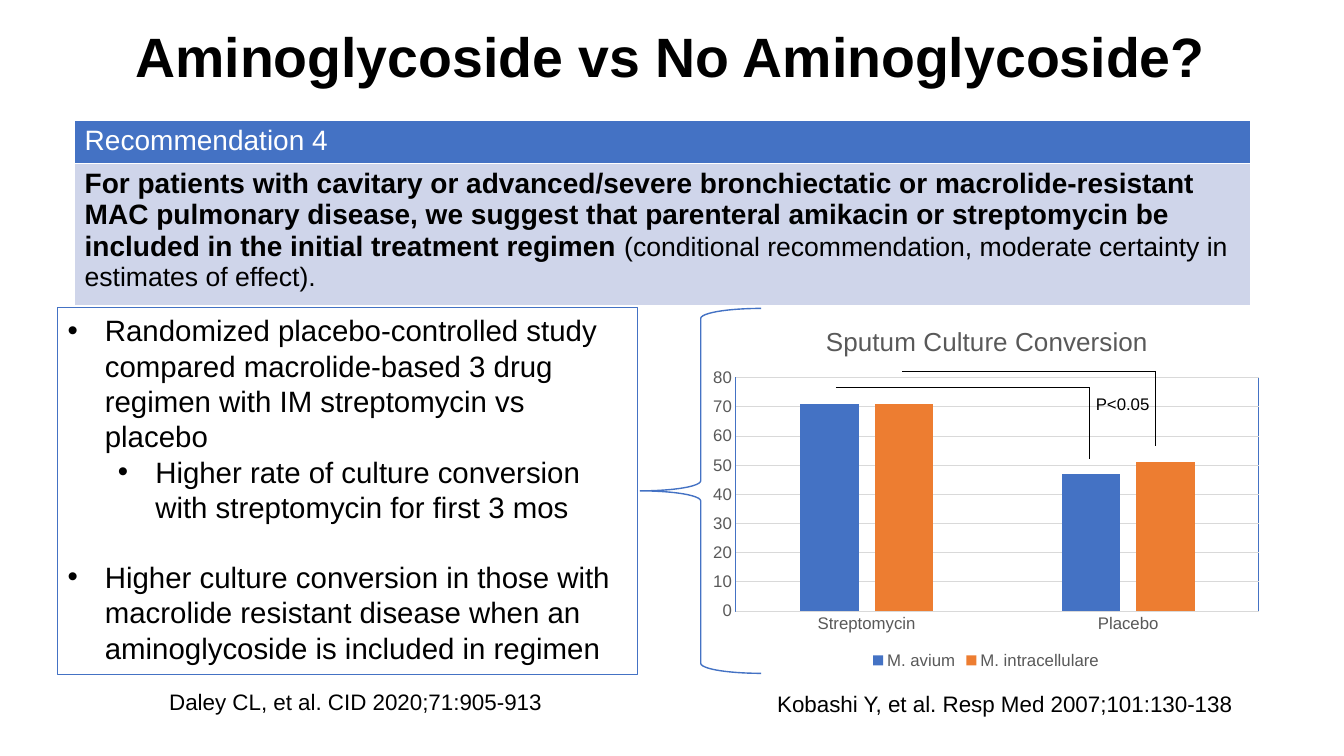
from lxml import etree
from pptx import Presentation
from pptx.chart.data import CategoryChartData
from pptx.dml.color import RGBColor
from pptx.enum import chart as ch, shapes, text
from pptx.oxml import parse_xml
from pptx.oxml.ns import nsdecls, qn
from pptx.util import Inches, Pt

FONT = "Arial"
BLACK, WHITE, GRAY, GRID = "000000", "FFFFFF", "595959", "D9D9D9"
BLUE, ORANGE, PALE = "4472C4", "ED7D31", "CFD5EA"


def rgb(value):
    return RGBColor.from_string(value)


def box(left, top, width, height):
    return [Inches(v) for v in (left, top, width, height)]


def place(sp, *bounds):
    sp.left, sp.top, sp.width, sp.height = box(*bounds)


def style(font, size, color=BLACK, bold=False):
    font.name, font.size, font.bold = FONT, Pt(size), bold
    font.color.rgb = rgb(color)


def set_line(line, color, width):
    line.color.rgb = rgb(color)
    line.width = Pt(width)


def add_title(slide, title):
    sp = slide.shapes.title
    place(sp, 0.9, 0.05, 11.5, 1.08)
    tf = sp.text_frame
    tf.text = title
    tf.vertical_anchor = text.MSO_ANCHOR.MIDDLE
    p = tf.paragraphs[0]
    p.alignment, p.line_spacing = text.PP_ALIGN.CENTER, 0.9
    style(p.runs[0].font, 39.6, bold=True)


def add_recommendation(slide, heading, advice, certainty):
    frame = slide.shapes.add_table(2, 1, *box(0.74, 1.19, 11.66, 1.84))
    table = frame.table
    for row, height in zip(table.rows, (0.43, 1.41)):
        row.height = Inches(height)
    for i, fill in enumerate((BLUE, PALE)):
        cell = table.cell(i, 0)
        cell.fill.solid()
        cell.fill.fore_color.rgb = rgb(fill)
    p = table.cell(0, 0).text_frame.paragraphs[0]
    p.text = heading
    style(p.runs[0].font, 20, WHITE)
    p = table.cell(1, 0).text_frame.paragraphs[0]
    for words, size, bold in ((advice, 20, True), (certainty, 19, False)):
        r = p.add_run()
        r.text = words
        style(r.font, size, bold=bold)


def add_bullets(slide, items):
    sp = slide.placeholders[1]
    place(sp, 0.57, 3.05, 5.75, 3.64)
    set_line(sp.line, BLUE, 0.75)
    tf = sp.text_frame
    tf.word_wrap = True
    tf.auto_size = text.MSO_AUTO_SIZE.NONE
    tf.vertical_anchor = text.MSO_ANCHOR.TOP
    for i, (level, before, words) in enumerate(items):
        p = tf.paragraphs[0] if i == 0 else tf.add_paragraph()
        p.text = words
        p.level, p.space_before, p.line_spacing = level, Pt(before), 1.0
        pPr = p._p.get_or_add_pPr()
        pPr.set("marL", str(Inches(0.37 + 0.5 * level)))
        pPr.set("indent", str(Inches(-0.37)))
        etree.SubElement(pPr, qn("a:buFont"), typeface=FONT)
        etree.SubElement(pPr, qn("a:buChar"), char="•")
        style(p.runs[0].font, 21)


def manual_layout(x, y, w=None, h=None, inner=False):
    """Layout element with positions as fractions of the chart."""
    parts = '<c:layoutTarget val="inner"/>' if inner else ""
    parts += '<c:xMode val="edge"/><c:yMode val="edge"/>'
    for tag, value in zip("xywh", (x, y, w, h)):
        if value is not None:
            parts += f'<c:{tag} val="{value}"/>'
    return parse_xml(f'<c:layout {nsdecls("c")}><c:manualLayout>{parts}'
                     '</c:manualLayout></c:layout>')


def add_conversion_chart(slide, title, categories, series):
    data = CategoryChartData()
    data.categories = categories
    for name, values, _ in series:
        data.add_series(name, values)
    chart = slide.shapes.add_chart(ch.XL_CHART_TYPE.COLUMN_CLUSTERED,
                                   *box(6.96, 3.06, 5.64, 3.62), data).chart
    style(chart.font, 10)

    # Title and legend
    chart.has_title = True
    tf = chart.chart_title.text_frame
    tf.text = title
    style(tf.paragraphs[0].runs[0].font, 18.6, GRAY)
    chart.chart_title.include_in_layout = False
    title_xml = chart.chart_title._element
    for old in title_xml.findall(qn("c:layout")):
        title_xml.remove(old)
    title_xml.find(qn("c:tx")).addnext(manual_layout(0.21, 0.03))
    chart.has_legend = True
    chart.legend.position = ch.XL_LEGEND_POSITION.BOTTOM
    chart.legend.include_in_layout = False
    style(chart.legend.font, 12, GRAY)

    # Axes
    values, cats = chart.value_axis, chart.category_axis
    for axis in (values, cats):
        axis.major_tick_mark = axis.minor_tick_mark = ch.XL_TICK_MARK.NONE
        style(axis.tick_labels.font, 12, GRAY)
    values.minimum_scale, values.maximum_scale, values.major_unit = 0, 80, 10
    values.format.line.fill.background()
    set_line(values.major_gridlines.format.line, GRID, 0.75)
    set_line(cats.format.line, GRID, 0.75)

    # Columns
    plot = chart.plots[0]
    plot.gap_width, plot.overlap, plot.vary_by_categories = 219, -27, False
    for s, (_, _, color) in zip(plot.series, series):
        s.format.fill.solid()
        s.format.fill.fore_color.rgb = rgb(color)

    # Plot area position and outline
    area = chart._chartSpace.chart.plotArea
    for old in area.findall(qn("c:layout")):
        area.remove(old)
    area.insert(0, manual_layout(0.06, 0.19, 0.92, 0.64, inner=True))
    area.append(parse_xml(
        f'<c:spPr {nsdecls("c", "a")}><a:noFill/><a:ln w="{Pt(0.75)}"><a:solidFill>'
        f'<a:srgbClr val="{BLUE}"/></a:solidFill></a:ln></c:spPr>'))


def add_line(slide, x1, y1, x2, y2):
    line = slide.shapes.add_connector(
        shapes.MSO_CONNECTOR.STRAIGHT, *box(x1, y1, x2, y2))
    set_line(line.line, BLACK, 0.25)
    etree.SubElement(line._element.spPr, qn("a:effectLst"))


def add_bracket(slide, left, right, top, bottom):
    add_line(slide, left, top, right, top)
    add_line(slide, right, top, right, bottom)


def add_label(slide, words, size, *bounds):
    tf = slide.shapes.add_textbox(*box(*bounds)).text_frame
    tf.text = words
    tf.word_wrap = False
    style(tf.paragraphs[0].runs[0].font, size)


def add_brace(slide):
    sp = slide.shapes.add_shape(shapes.MSO_SHAPE.LEFT_BRACE,
                                *box(6.35, 3.06, 1.2, 3.62))
    sp.shadow.inherit = False
    sp.fill.background()
    set_line(sp.line, BLUE, 1)


def main():
    prs = Presentation()
    prs.slide_width, prs.slide_height = Inches(13.33), Inches(7.5)
    slide = prs.slides.add_slide(prs.slide_layouts[1])
    add_title(slide, "Aminoglycoside vs No Aminoglycoside?")
    add_recommendation(
        slide, "Recommendation 4",
        "For patients with cavitary or advanced/severe bronchiectatic or "
        "macrolide-resistant MAC pulmonary disease, we suggest that parenteral "
        "amikacin or streptomycin be included in the initial treatment regimen ",
        "(conditional recommendation, moderate certainty in estimates of effect).")
    add_bullets(slide, [
        (0, 0, "Randomized placebo-controlled study compared macrolide-based "
               "3 drug regimen with IM streptomycin vs placebo"),
        (1, 0, "Higher rate of culture conversion with streptomycin for first 3 mos"),
        (0, 25, "Higher culture conversion in those with macrolide resistant "
                "disease when an aminoglycoside is included in regimen")])
    add_conversion_chart(
        slide, "Sputum Culture Conversion", ["Streptomycin", "Placebo"],
        [("M. avium", (71, 47), BLUE), ("M. intracellulare", (71, 51), ORANGE)])

    # Significance brackets
    add_bracket(slide, 8.29, 10.8, 3.84, 4.55)
    add_bracket(slide, 8.95, 11.46, 3.68, 4.42)
    add_label(slide, "P<0.05", 12, 10.77, 3.86, 0.74, 0.3)

    # References
    add_label(slide, "Kobashi Y, et al. Resp Med 2007;101:130-138", 16,
              7.61, 6.8, 4.77, 0.37)
    add_label(slide, "Daley CL, et al. CID 2020;71:905-913", 16,
              1.58, 6.78, 3.94, 0.37)
    add_brace(slide)
    prs.save("out.pptx")


if __name__ == "__main__":
    main()
